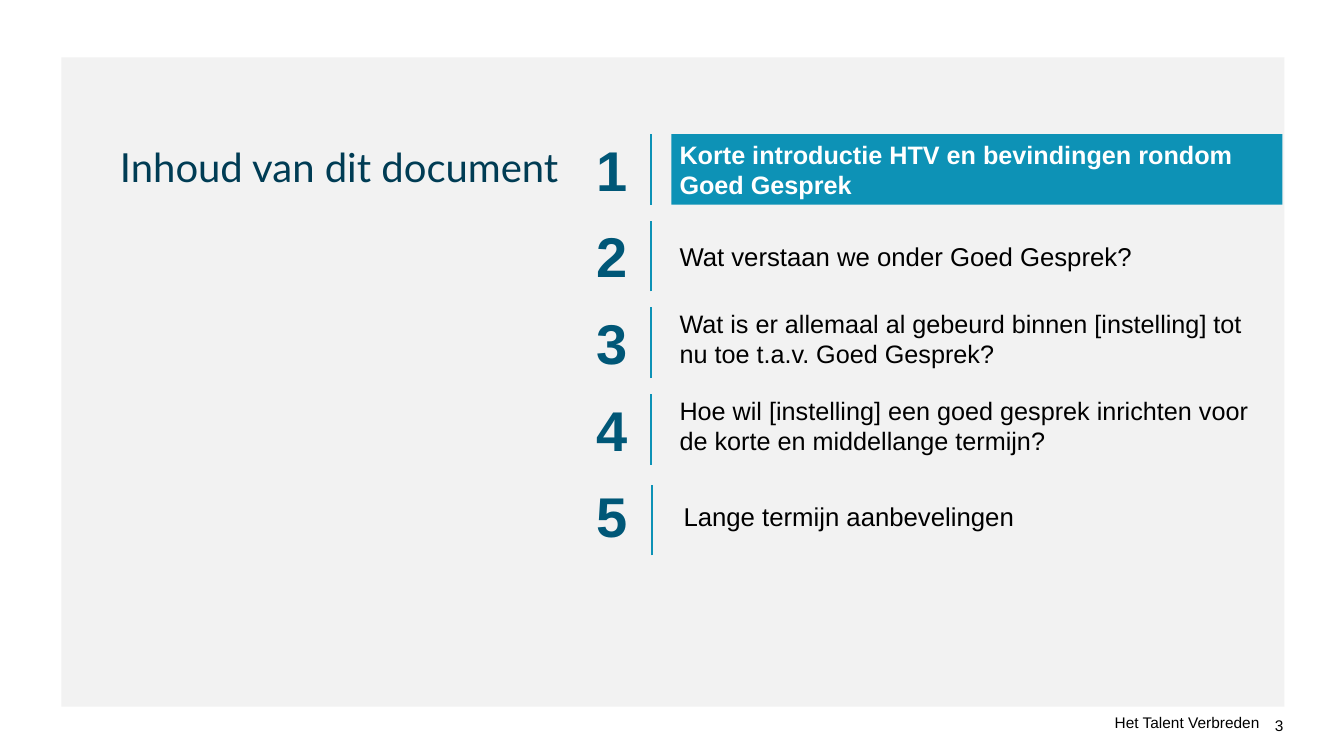
from lxml import etree
from pptx import Presentation
from pptx import util as u
from pptx.dml.color import RGBColor
from pptx.enum import shapes, text
from pptx.oxml.ns import qn

TEAL, NAVY, BLACK = "0D92B6", "005777", "000000"
ROW_TOP, ROW_STEP, ROW_HEIGHT = 1.33, 0.86, 0.7
DIVIDER_X, TOPIC_X = 6.46, 6.66

# topic, text size, (topic dx, topic dy), (divider dx, divider dy)
TOPICS = [
    ("Korte introductie HTV en bevindingen rondom Goed Gesprek", 18, (0, 0), (0, 0)),
    ("Wat verstaan we onder Goed Gesprek?", 18.4, (0, 0), (0, 0)),
    ("Wat is er allemaal al gebeurd binnen [instelling] tot nu toe t.a.v. Goed Gesprek?",
     18, (0, -0.04), (0, 0)),
    ("Hoe wil [instelling] een goed gesprek inrichten voor de korte en middellange termijn?",
     18, (0, -0.04), (0, 0)),
    ("Lange termijn aanbevelingen", 18.4, (0.04, 0), (0.01, 0.04)),
]


def color(hex_value):
    return RGBColor.from_string(hex_value)


def write(shape, wording, size, hex_value, align="LEFT", anchor="MIDDLE",
          inset=0, wrap=True, bold=False, font="Arial"):
    frame = shape.text_frame
    margin = u.Inches(inset)
    frame_format = {
        "margin_left": margin, "margin_right": margin,
        "margin_top": margin, "margin_bottom": margin,
        "word_wrap": wrap, "vertical_anchor": text.MSO_ANCHOR[anchor],
    }
    for name, value in frame_format.items():
        setattr(frame, name, value)
    paragraph = frame.paragraphs[0]
    paragraph.alignment = text.PP_ALIGN[align]
    run = paragraph.add_run()
    run.text = wording
    for name, value in {"name": font, "size": u.Pt(size), "bold": bold}.items():
        setattr(run.font, name, value)
    run.font.color.rgb = color(hex_value)


def add_label(slide, box, wording, size, hex_value, **text_format):
    label = slide.shapes.add_textbox(*map(u.Inches, box))
    write(label, wording, size, hex_value, **text_format)


def add_panel(slide, box, fill):
    panel = slide.shapes.add_shape(shapes.MSO_SHAPE.RECTANGLE, *map(u.Inches, box))
    panel.shadow.inherit = False
    panel.fill.solid()
    panel.fill.fore_color.rgb = color(fill)
    panel.line.fill.background()
    return panel


def add_divider(slide, x, top):
    divider = slide.shapes.add_connector(
        shapes.MSO_CONNECTOR.STRAIGHT,
        *map(u.Inches, (x, top + ROW_HEIGHT, x, top)))
    divider.line.color.rgb = color(TEAL)
    divider.line.width = u.Pt(1.5)
    etree.SubElement(divider._element.spPr, qn("a:effectLst"))


def add_topic(slide, number, topic, size, topic_shift, divider_shift):
    top = ROW_TOP + (number - 1) * ROW_STEP
    add_label(slide, (5.83, top + 0.08, 0.49, 0.53), str(number), 40, NAVY,
              align="CENTER", wrap=False, bold=True)
    add_divider(slide, DIVIDER_X + divider_shift[0], top + divider_shift[1])
    box = (TOPIC_X + topic_shift[0], top + topic_shift[1], 6.06, ROW_HEIGHT)
    if number == 1:
        write(add_panel(slide, box, TEAL), topic, size, "FFFFFF", inset=0.08, bold=True)
    else:
        add_label(slide, box, topic, size, BLACK, inset=0.08)


def main():
    deck = Presentation()
    deck.slide_width, deck.slide_height = u.Inches(13.33), u.Inches(7.5)
    slide = deck.slides.add_slide(deck.slide_layouts[6])
    add_label(slide, (12.45, 7.1, 0.28, 0.19), "3", 11, BLACK, align="RIGHT", wrap=False)
    add_label(slide, (11.01, 7.07, 1.53, 0.19), "Het Talent Verbreden", 11, BLACK,
              align="CENTER", anchor="BOTTOM", wrap=False)
    add_panel(slide, (0.61, 0.57, 12.13, 6.44), "F2F2F2")
    add_label(slide, (1.19, 1.41, 4.38, 0.42), "Inhoud van dit document", 28.6, "003C54",
              anchor="TOP", font="Lato")
    for number, topic in enumerate(TOPICS, 1):
        add_topic(slide, number, *topic)
    deck.save("out.pptx")


if __name__ == "__main__":
    main()
